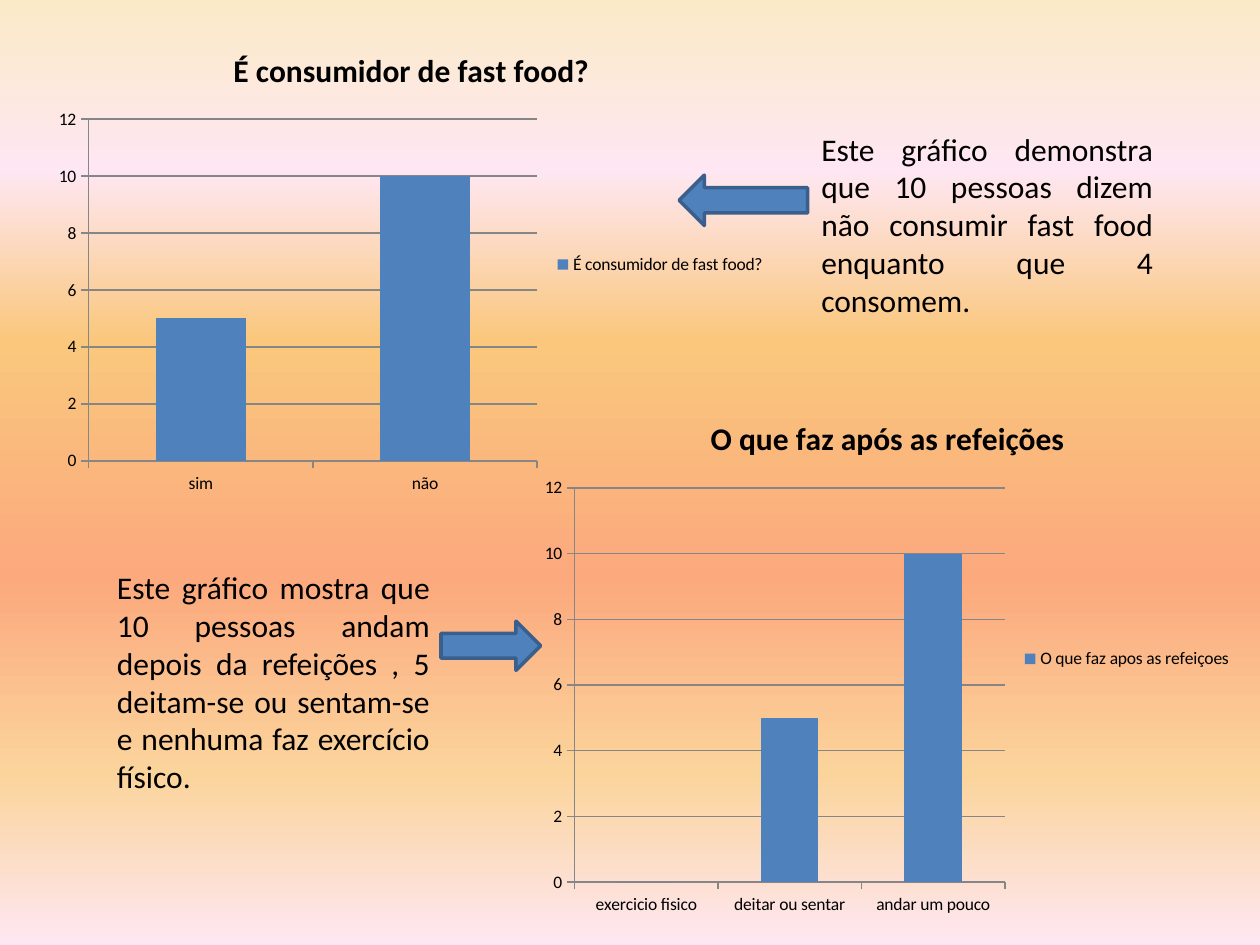
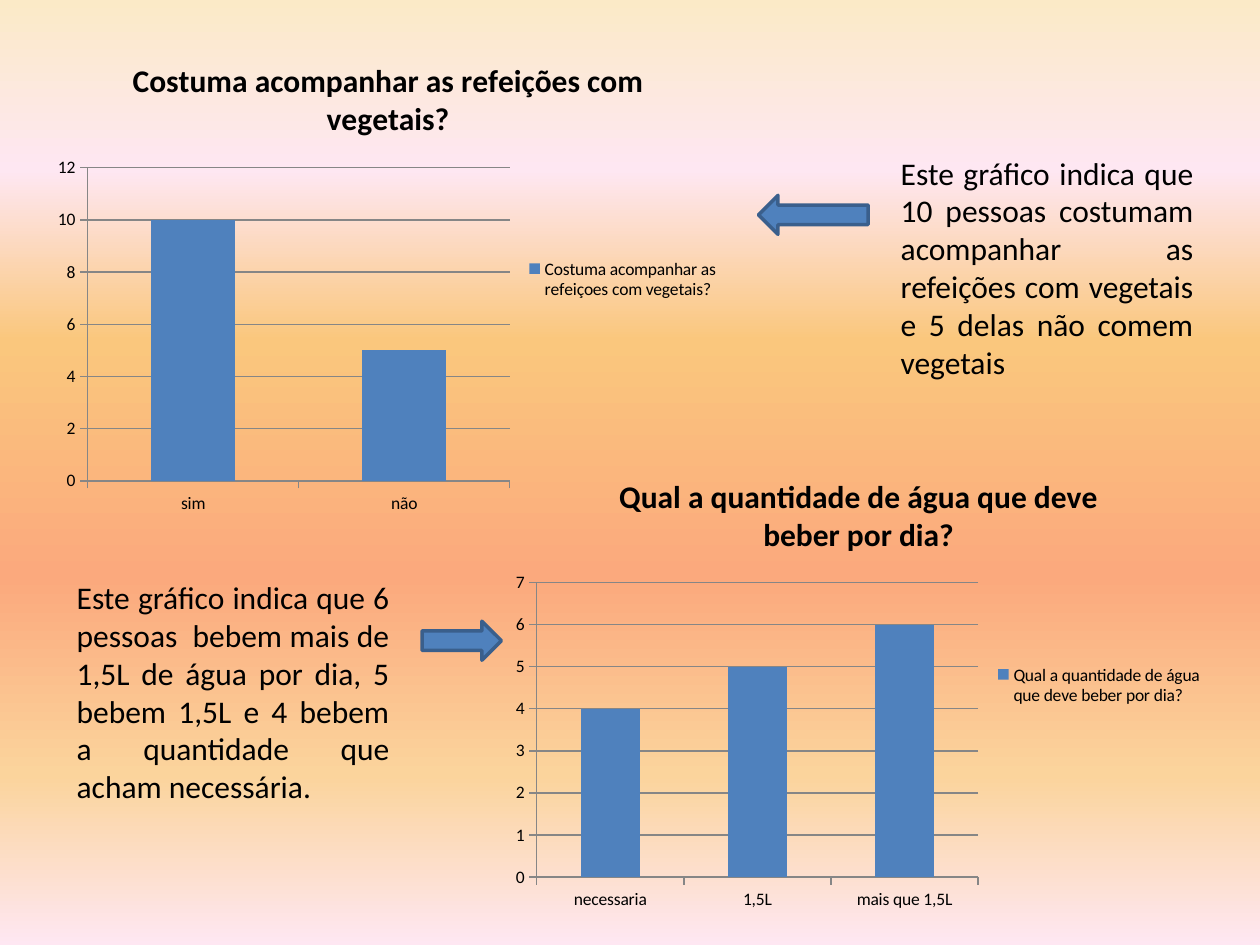
from lxml import etree
from pptx import Presentation
from pptx.chart.data import CategoryChartData
from pptx.dml.color import RGBColor
from pptx.enum import chart as ch, shapes, text
from pptx.oxml.ns import qn
from pptx.util import Inches, Pt

FONT = "Calibri"
COLORS = {"text": "000000", "bar": "4F81BD", "edge": "3A5F8C", "grid": "868686"}
SUNSET = [(0, "FBEAC7"), (18, "FEE7F2"), (36, "FAC77D"),
          (61, "FBA97D"), (82, "FBD49C"), (100, "FEE7F2")]
LEFT = shapes.MSO_SHAPE.LEFT_ARROW
RIGHT = shapes.MSO_SHAPE.RIGHT_ARROW

# Each survey question: chart, explanation, and the arrow between them.
SLIDES = [
    [
        {
            "title": "É consumidor de fast food?",
            "series": "É consumidor de fast food?",
            "data": {"sim": 5, "não": 10},
            "chart": (0.35, 0.21, 5.83, 3.78),
            "note": "Este gráfico demonstra que 10 pessoas dizem não consumir "
                    "fast food enquanto que 4 consomem.",
            "box": (6.42, 0.98, 2.83, 1.62),
            "arrow": (LEFT, 5.39, 1.39, 1.02, 0.4),
        },
        {
            "title": "O que faz após as refeições",
            "series": "O que faz apos as refeiçoes",
            "data": {"exercicio fisico": 0, "deitar ou sentar": 5,
                     "andar um pouco": 10},
            "chart": (4.21, 3.12, 5.67, 4.22),
            "note": "Este gráfico mostra que 10 pessoas andam depois da "
                    "refeições , 5 deitam-se ou sentam-se e nenhuma faz "
                    "exercício físico.",
            "box": (0.83, 4.46, 2.68, 1.92),
            "arrow": (RIGHT, 3.5, 4.93, 0.79, 0.39),
        },
    ],
    [
        {
            "title": "Costuma acompanhar as refeições com vegetais?",
            "series": "Costuma acompanhar as refeiçoes com vegetais?",
            "data": {"sim": 10, "não": 5},
            "chart": (0.35, 0.29, 5.46, 3.86),
            "note": "Este gráfico indica que 10 pessoas costumam acompanhar "
                    "as refeições com vegetais e 5 delas não comem vegetais",
            "box": (7.05, 1.17, 2.52, 1.92),
            "arrow": (LEFT, 6.02, 1.55, 0.87, 0.31),
        },
        {
            "title": "Qual a quantidade de água que deve beber por dia?",
            "series": "Qual a quantidade de água que deve beber por dia?",
            "data": {"necessaria": 4, "1,5L": 5, "mais que 1,5L": 6},
            "chart": (3.98, 3.59, 5.67, 3.7),
            "note": "Este gráfico indica que 6 pessoas  bebem mais de 1,5L de "
                    "água por dia, 5 bebem 1,5L e 4 bebem a quantidade que "
                    "acham necessária.",
            "box": (0.51, 4.54, 2.68, 1.92),
            "arrow": (RIGHT, 3.35, 4.93, 0.63, 0.31),
        },
    ],
]


def color(name):
    return RGBColor.from_string(COLORS[name])


def inches(box):
    return [Inches(n) for n in box]


def style(font, size, bold=False):
    font.name = FONT
    font.size = Pt(size)
    font.bold = bold
    font.color.rgb = color("text")


def paint(slide):
    """Fill the background with the sunset gradient, top to bottom."""
    fill = slide.background.fill
    fill.gradient()
    fill.gradient_angle = 270
    stops = slide.element.find(".//" + qn("a:gsLst"))
    for stop in list(stops):
        stops.remove(stop)
    for pos, shade in SUNSET:
        stop = etree.SubElement(stops, qn("a:gs"), pos=str(pos * 1000))
        etree.SubElement(stop, qn("a:srgbClr"), val=shade)


def rule(line):
    line.color.rgb = color("grid")
    line.width = Pt(0.75)


def add_bars(slide, item):
    data = CategoryChartData()
    data.categories = list(item["data"])
    data.add_series(item["series"], list(item["data"].values()))
    kind = ch.XL_CHART_TYPE.COLUMN_CLUSTERED
    chart = slide.shapes.add_chart(kind, *inches(item["chart"]), data).chart
    style(chart.font, 10)

    chart.has_title = True
    frame = chart.chart_title.text_frame
    frame.text = item["title"]
    style(frame.paragraphs[0].runs[0].font, 18, True)
    chart.chart_title.include_in_layout = False

    chart.has_legend = True
    chart.legend.position = ch.XL_LEGEND_POSITION.RIGHT
    chart.legend.include_in_layout = False

    for axis in (chart.category_axis, chart.value_axis):
        axis.major_tick_mark = ch.XL_TICK_MARK.OUTSIDE
        axis.minor_tick_mark = ch.XL_TICK_MARK.NONE
        rule(axis.format.line)
    chart.value_axis.has_major_gridlines = True
    rule(chart.value_axis.major_gridlines.format.line)

    plot = chart.plots[0]
    plot.gap_width = 150
    plot.vary_by_categories = False
    fill = plot.series[0].format.fill
    fill.solid()
    fill.fore_color.rgb = color("bar")


def add_note(slide, words, box):
    frame = slide.shapes.add_textbox(*inches(box)).text_frame
    frame.word_wrap = True
    frame.auto_size = text.MSO_AUTO_SIZE.SHAPE_TO_FIT_TEXT
    frame.text = words
    para = frame.paragraphs[0]
    para.alignment = text.PP_ALIGN.JUSTIFY
    style(para.runs[0].font, 18)


def add_arrow(slide, kind, *box):
    arrow = slide.shapes.add_shape(kind, *inches(box))
    arrow.shadow.inherit = False
    arrow.fill.solid()
    arrow.fill.fore_color.rgb = color("bar")
    arrow.line.color.rgb = color("edge")
    arrow.line.width = Pt(2)


def main():
    deck = Presentation()
    deck.slide_width, deck.slide_height = Inches(10), Inches(7.5)
    for items in SLIDES:
        slide = deck.slides.add_slide(deck.slide_layouts[6])
        paint(slide)
        for item in items:
            add_bars(slide, item)
        for item in items:
            add_note(slide, item["note"], item["box"])
            add_arrow(slide, *item["arrow"])
    deck.save("out.pptx")


if __name__ == "__main__":
    main()
